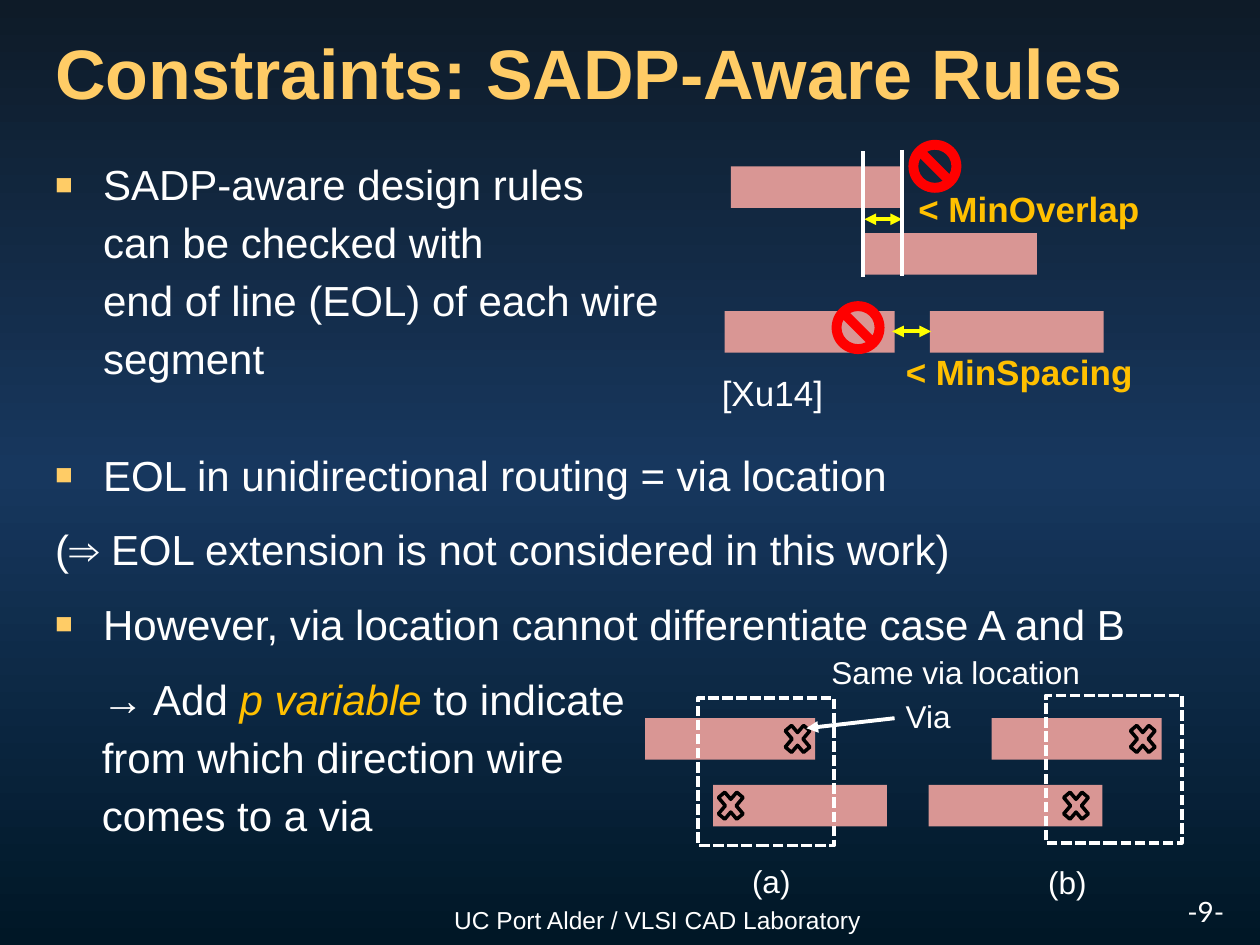
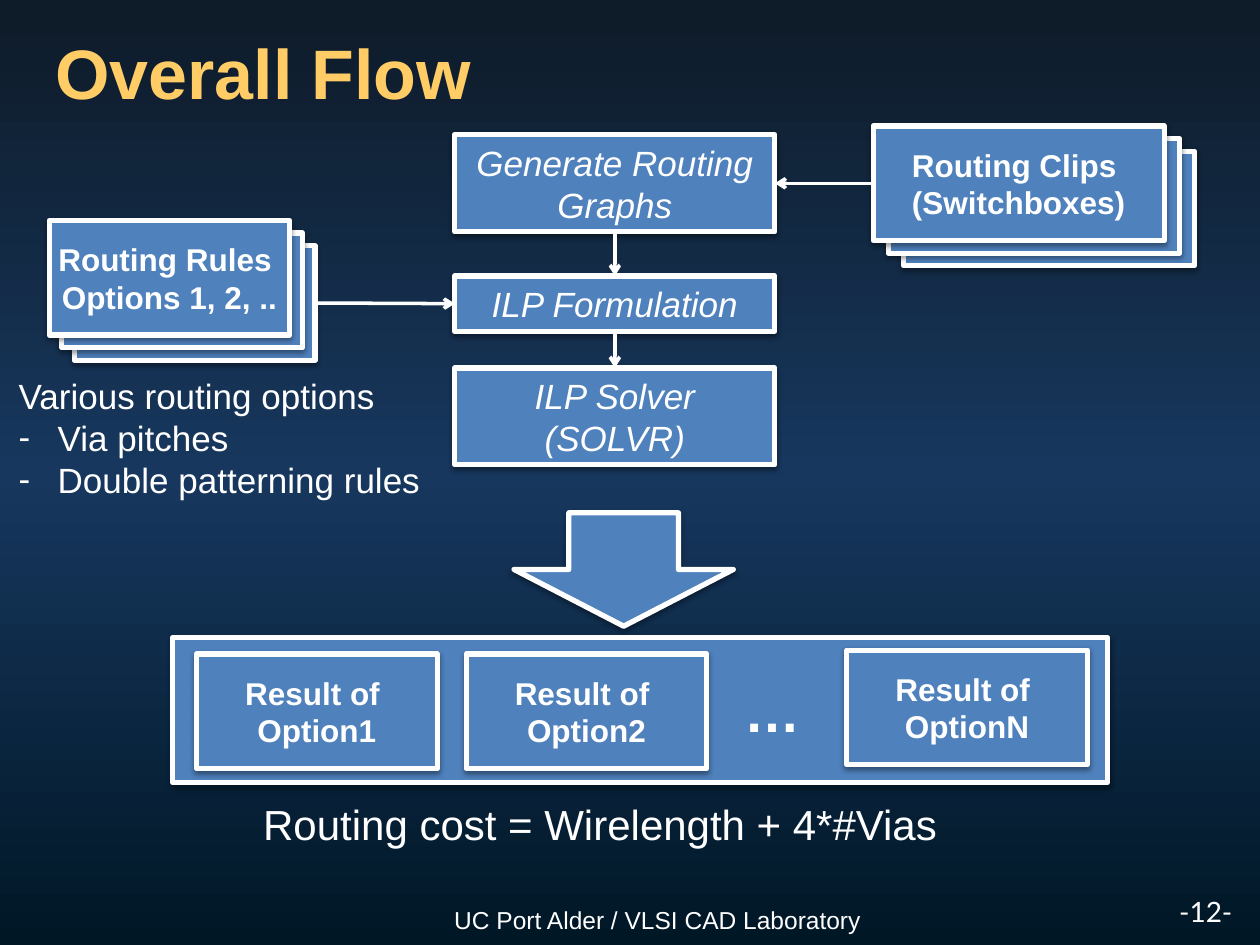
from copy import deepcopy
from dataclasses import dataclass

from lxml import etree
from pptx import Presentation
from pptx import util as u
from pptx.dml.color import RGBColor
from pptx.enum import dml, shapes, text
from pptx.oxml.ns import qn

SHAPE = shapes.MSO_SHAPE
TOP, LEFT, BOTTOM, RIGHT = range(4)


@dataclass(frozen=True)
class Theme:
    """Colours, fonts and type sizes of the deck."""
    white: str = "FFFFFF"
    black: str = "000000"
    title: str = "FFCC66"
    accent: str = "FFC000"
    wire: str = "D99694"
    box: str = "4F81BD"
    forbidden: str = "FF0000"
    gap: str = "FFFF00"
    backdrop: tuple = ((0, "001726"), (0.5, "17375E"), (1, "0E1B28"))
    font: str = "Arial"
    number_font: str = "Lato"
    title_size: int = 40
    ellipsis_size: int = 32
    body_size: int = 24
    note_size: int = 20
    label_size: int = 18
    number_size: int = 16
    footer_size: int = 14


THEME = Theme()


def rgb(color):
    """Turn a hex string into a colour."""
    return RGBColor.from_string(color)


def add_xml(parent, tag, **attributes):
    """Append a DrawingML element and return it."""
    return etree.SubElement(parent, qn(tag), attributes)


def set_font(paragraph, size, color=THEME.white, bold=False, italic=False, name=THEME.font):
    """Set the font of a whole paragraph."""
    font = paragraph.font
    font.size, font.name, font.bold, font.italic = u.Pt(size), name, bold, italic
    font.color.rgb = rgb(color)


def set_indent(paragraph, margin, bullet=None, color=THEME.white, percent=100):
    """Indent a paragraph, with a hanging bullet if one is given."""
    properties = paragraph._p.get_or_add_pPr()
    properties.set("marL", str(u.Inches(margin)))
    properties.set("indent", str(-u.Inches(margin) if bullet else 0))
    if bullet:
        add_xml(add_xml(properties, "a:buClr"), "a:srgbClr", val=color)
        add_xml(properties, "a:buSzPct", val=str(percent * 1000))
        add_xml(properties, "a:buFont", typeface=THEME.font)
        add_xml(properties, "a:buChar", char=bullet)


def add_frame(slide, left, top, width, height, wrap=True):
    """Add a text box and return its text frame."""
    box = slide.shapes.add_textbox(*map(u.Inches, (left, top, width, height)))
    box.text_frame.word_wrap = wrap
    return box.text_frame


def add_label(slide, place, wording, size, centered=False, **font):
    """Add a one-line label."""
    paragraph = add_frame(slide, *place, wrap=False).paragraphs[0]
    paragraph.text = wording
    if centered:
        paragraph.alignment = text.PP_ALIGN.CENTER
    set_font(paragraph, size, **font)


def add_title(slide, wording):
    """Add the slide title with its text shadow."""
    frame = add_frame(slide, 0.34, 0.22, 9.39, 0.78)
    frame.vertical_anchor = text.MSO_ANCHOR.MIDDLE
    paragraph = frame.paragraphs[0]
    paragraph.text = wording
    paragraph.line_spacing = 0.9
    set_font(paragraph, THEME.title_size, THEME.title, bold=True)
    effects = add_xml(paragraph.runs[0]._r.get_or_add_rPr(), "a:effectLst")
    shadow = add_xml(effects, "a:outerShdw", dist=str(u.Pt(3)), dir="2700000")
    add_xml(shadow, "a:srgbClr", val=THEME.black)


def add_slide(deck, title, number):
    """Add a blank slide with title, footer and number."""
    slide = deck.slides.add_slide(deck.slide_layouts[6])
    add_label(slide, (3.47, 7.13, 3.5, 0.34), "UC Port Alder / VLSI CAD Laboratory",
              THEME.footer_size, centered=True)
    add_label(slide, (9.22, 7.05, 0.7, 0.37), f"-{number}-", THEME.number_size,
              centered=True, name=THEME.number_font)
    add_title(slide, title)
    return slide


def paint_backdrop(master):
    """Give the master its three-stop vertical gradient."""
    fill = master.background.fill
    fill.gradient()
    fill.gradient_angle = 90
    stop_list = master.element.find(".//" + qn("a:gsLst"))
    stop_list.append(deepcopy(stop_list[-1]))
    for stop, (position, color) in zip(fill.gradient_stops, THEME.backdrop):
        stop.position = position
        stop.color.rgb = rgb(color)


def add_figure(slide, kind, place, fill=None, line=None, width=2):
    """Add a preset shape without shadow."""
    figure = slide.shapes.add_shape(kind, *map(u.Inches, place))
    figure.shadow.inherit = False
    if fill:
        figure.fill.solid()
        figure.fill.fore_color.rgb = rgb(fill)
    else:
        figure.fill.background()
    if line:
        figure.line.color.rgb = rgb(line)
        figure.line.width = u.Pt(width)
    else:
        figure.line.fill.background()
    return figure


def add_wire(slide, left, top, width):
    """Add a wire segment."""
    add_figure(slide, SHAPE.RECTANGLE, (left, top, width, 0.33), THEME.wire)


def add_via(slide, left, top):
    """Add a via cross."""
    add_figure(slide, SHAPE.MATH_MULTIPLY, (left, top, 0.28, 0.33), THEME.wire, THEME.black)


def add_ban(slide, left, top):
    """Add a prohibition sign."""
    add_figure(slide, SHAPE.NO_SYMBOL, (left, top, 0.42, 0.42), THEME.forbidden)


def add_window(slide, left, top):
    """Add a dashed window around two wire ends."""
    window = add_figure(slide, SHAPE.RECTANGLE, (left, top, 1.08, 1.17), line=THEME.white)
    window.line.dash_style = dml.MSO_LINE.SQUARE_DOT


def add_line(slide, start=(0, 0), end=(0, 0), color=THEME.white, width=2.25, head=None, tail=None):
    """Add a straight line with optional arrowheads."""
    line = slide.shapes.add_connector(shapes.MSO_CONNECTOR.STRAIGHT, *map(u.Inches, start + end))
    line.line.color.rgb = rgb(color)
    line.line.width = u.Pt(width)
    outline = line.element.find(".//" + qn("a:ln"))
    for tag, arrow in (("a:headEnd", head), ("a:tailEnd", tail)):
        if arrow:
            add_xml(outline, tag, type=arrow)
    add_xml(line.element.spPr, "a:effectLst")
    return line


def add_flow(slide, source, source_side, target, target_side):
    """Join two boxes with an arrow."""
    arrow = add_line(slide, width=2, tail="arrow")
    arrow.begin_connect(source, source_side)
    arrow.end_connect(target, target_side)


def add_box(slide, place, wording="", size=THEME.label_size, step=False, kind=SHAPE.RECTANGLE):
    """Add a shadowed flow box; step boxes wrap and are italic."""
    box = add_figure(slide, kind, place, THEME.box, THEME.white, 3)
    effects = box.element.spPr.find(qn("a:effectLst"))
    shadow = add_xml(effects, "a:outerShdw", blurRad=str(u.Pt(3.1)), dist=str(u.Pt(1.6)),
                     dir="5400000", rotWithShape="0")
    add_xml(add_xml(shadow, "a:srgbClr", val=THEME.black), "a:alpha", val="38000")
    if wording:
        frame = box.text_frame
        frame.word_wrap = step
        frame.vertical_anchor = text.MSO_ANCHOR.MIDDLE
        if step:
            frame.margin_left = frame.margin_right = 0
        paragraph = frame.paragraphs[0]
        paragraph.text = wording
        paragraph.alignment = text.PP_ALIGN.CENTER
        set_font(paragraph, size, bold=not step, italic=step)
    return box


def add_stack(slide, left, top, width, shift, wording):
    """Add three stacked cards; return the back and front ones."""
    cards = [add_box(slide, (left + depth * shift, top + depth * 0.1, width, 0.91),
                     "" if depth else wording) for depth in (2, 1, 0)]
    return cards[0], cards[-1]


def add_rule_points(slide):
    """Add the body text of the rules slide."""
    points = (
        ("SADP-aware design rules \ncan be checked with \nend of line (EOL) of each wire \nsegment",
         0.38, "■", 0),
        ("EOL in unidirectional routing = via location", 0.38, "■", 33.5),
        ("(⇒ EOL extension is not considered in this work)", 0, None, 9.6),
        ("However, via location cannot differentiate case A and B", 0.38, "■", 9.6),
        ("→ Add ", 0.37, None, 9.6),
    )
    frame = add_frame(slide, 0.34, 1.15, 9.37, 6.19)
    for index, (wording, margin, bullet, before) in enumerate(points):
        paragraph = frame.add_paragraph() if index else frame.paragraphs[0]
        paragraph.text = wording
        set_indent(paragraph, margin, bullet, THEME.title, 70)
        paragraph.line_spacing = 1.15
        paragraph.space_before = u.Pt(before)
        set_font(paragraph, THEME.body_size)
    variable = paragraph.add_run()
    variable.text = "p variable "
    variable.font.italic = True
    variable.font.color.rgb = rgb(THEME.accent)
    paragraph.add_run().text = "to indicate "
    for wording in ("from which direction wire ", "comes to a via"):
        paragraph.add_line_break()
        paragraph.add_run().text = wording


def add_violations(slide):
    """Draw the overlap and spacing violations."""
    for left, top, width in ((5.8, 1.32, 1.35), (6.85, 1.85, 1.38),
                             (5.75, 2.47, 1.35), (7.38, 2.47, 1.38)):
        add_wire(slide, left, top, width)
    add_ban(slide, 7.21, 1.11)
    add_ban(slide, 6.6, 2.39)
    for left, right, y in ((6.86, 7.16, 1.74), (7.08, 7.39, 2.63)):
        add_line(slide, (left, y), (right, y), THEME.gap, head="triangle", tail="triangle")
    for x, top in ((6.85, 1.2), (7.16, 1.19)):
        add_line(slide, (x, top), (x, top + 1))
    for place, wording in (((7.19, 1.44, 1.97, 0.44), "< MinOverlap"),
                           ((7.09, 2.73, 2.02, 0.44), "< MinSpacing")):
        add_label(slide, place, wording, THEME.note_size, color=THEME.accent, bold=True)
    add_label(slide, (5.63, 2.9, 1.01, 0.44), "[Xu14]", THEME.note_size)


def add_via_cases(slide):
    """Draw the two cases that share via locations."""
    upper, lower = 5.7, 6.23
    cases = ((5.12, 5.66, 6.19, 5.66, (5.54, 5.54)), (7.87, 7.37, 8.93, 8.4, (8.3, 5.52)))
    for upper_wire, lower_wire, upper_via, lower_via, window in cases:
        add_wire(slide, upper_wire, upper, 1.35)
        add_wire(slide, lower_wire, lower, 1.38)
        add_via(slide, upper_via, upper)
        add_via(slide, lower_via, lower)
        add_window(slide, *window)
    add_line(slide, (7.1, 5.7), (6.4, 5.78), tail="triangle")
    for left, top, width, wording in ((5.87, 6.79, 0.51, "(a)"), (8.22, 6.8, 0.51, "(b)"),
                                      (7.09, 5.48, 0.56, "Via"),
                                      (6.5, 5.13, 2.19, "Same via location")):
        add_label(slide, (left, top, width, 0.4), wording, THEME.label_size)


def add_option_notes(slide):
    """List the routing options."""
    frame = add_frame(slide, 0.05, 2.92, 3.46, 1.09)
    for index, wording in enumerate(("Various routing options", "Via pitches",
                                     "Double patterning rules")):
        paragraph = frame.add_paragraph() if index else frame.paragraphs[0]
        paragraph.text = wording
        if index:
            set_indent(paragraph, 0.31, "-")
        set_font(paragraph, THEME.note_size)


def add_steps(slide):
    """Draw the flow steps with their inputs."""
    clips = add_stack(slide, 6.93, 1, 2.31, 0.12, "Routing Clips \n(Switchboxes)")[1]
    rules = add_stack(slide, 0.39, 1.75, 1.91, 0.1, "Routing Rules \nOptions 1, 2, ..")[0]
    graphs, formulation, solver = (
        add_box(slide, (3.61, top, 2.54, height), wording, THEME.note_size, step=True)
        for top, height, wording in ((1.07, 0.77, "Generate Routing Graphs"),
                                     (2.19, 0.44, "ILP Formulation"),
                                     (2.92, 0.77, "ILP Solver\n(SOLVR)")))
    add_flow(slide, rules, RIGHT, formulation, LEFT)
    add_flow(slide, clips, LEFT, graphs, RIGHT)
    add_flow(slide, graphs, BOTTOM, formulation, TOP)
    add_flow(slide, formulation, BOTTOM, solver, TOP)


def add_results(slide):
    """Draw the results panel and the cost formula."""
    add_box(slide, (1.37, 5.06, 7.42, 1.15))
    for left, top, option in ((1.56, 5.19, "1"), (3.7, 5.19, "2"), (6.72, 5.16, "N")):
        add_box(slide, (left, top, 1.91, 0.91), f"Result of \nOption{option}")
    add_box(slide, (4.08, 4.07, 1.74, 0.9), kind=SHAPE.DOWN_ARROW)
    add_label(slide, (5.81, 5.32, 0.65, 0.64), "…", THEME.ellipsis_size, bold=True)
    add_label(slide, (1.99, 6.29, 5.72, 0.5), "Routing cost = Wirelength + 4*#Vias",
              THEME.body_size)


def main():
    """Build and save the deck."""
    deck = Presentation()
    deck.slide_width, deck.slide_height = u.Inches(10), u.Inches(7.5)
    paint_backdrop(deck.slide_master)

    rules_slide = add_slide(deck, "Constraints: SADP-Aware Rules", 9)
    add_rule_points(rules_slide)
    add_violations(rules_slide)
    add_via_cases(rules_slide)

    flow_slide = add_slide(deck, "Overall Flow", 12)
    add_option_notes(flow_slide)
    add_steps(flow_slide)
    add_results(flow_slide)

    deck.save("out.pptx")


if __name__ == "__main__":
    main()
